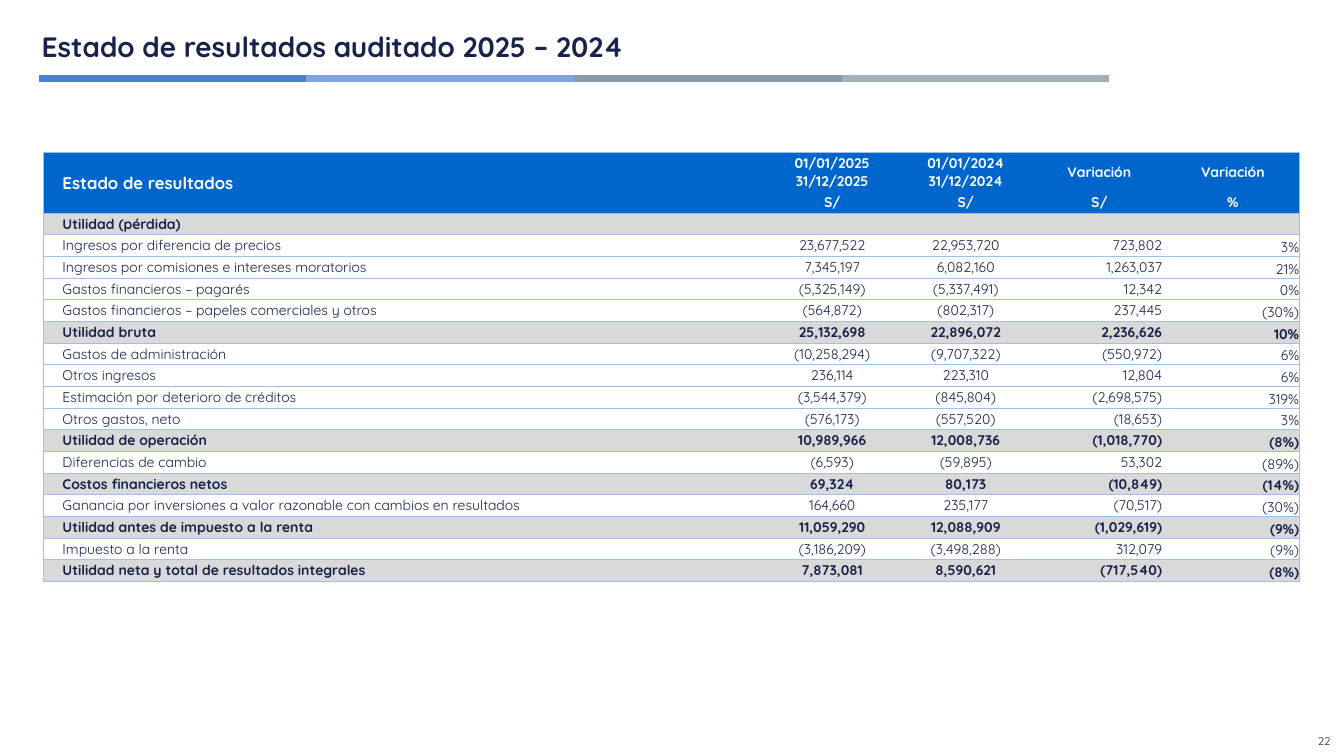
"""Builds the audited income statement slide, 2025 against 2024."""
from lxml.etree import SubElement
from pptx import Presentation
from pptx.dml.color import RGBColor
from pptx.enum.shapes import MSO_CONNECTOR
from pptx.enum.text import MSO_ANCHOR, PP_ALIGN
from pptx.oxml.ns import qn
from pptx.util import Inches, Pt

COLORS = {"navy": "19234A", "white": "FFFFFF", "header": "0066CC",
          "total": "D9D9D9", "border": "9BC2E6"}
BAR_COLORS = ["4B7ED5", "7FA4E1", "879AA5", "A2B0B9"]
NO_STYLE = "{2D5ABB26-0587-4C30-8999-92F81FD0307C}"
LEFT, CENTER, RIGHT = PP_ALIGN.LEFT, PP_ALIGN.CENTER, PP_ALIGN.RIGHT

HEADER = [
    ["Estado de resultados", "01/01/2025 31/12/2025", "01/01/2024 31/12/2024",
     "Variación", "Variación"],
    ["", "S/", "S/", "S/", "%"],
]
BODY = [
    ["Utilidad (pérdida)", "", "", "", ""],
    ["Ingresos por diferencia de precios", "23,677,522", "22,953,720", "723,802", "3%"],
    ["Ingresos por comisiones e intereses moratorios", "7,345,197", "6,082,160", "1,263,037", "21%"],
    ["Gastos financieros – pagarés", "(5,325,149)", "(5,337,491)", "12,342", "0%"],
    ["Gastos financieros – papeles comerciales y otros", "(564,872)", "(802,317)", "237,445", "(30%)"],
    ["Utilidad bruta", "25,132,698", "22,896,072", "2,236,626", "10%"],
    ["Gastos de administración", "(10,258,294)", "(9,707,322)", "(550,972)", "6%"],
    ["Otros ingresos", "236,114", "223,310", "12,804", "6%"],
    ["Estimación por deterioro de créditos", "(3,544,379)", "(845,804)", "(2,698,575)", "319%"],
    ["Otros gastos, neto", "(576,173)", "(557,520)", "(18,653)", "3%"],
    ["Utilidad de operación", "10,989,966", "12,008,736", "(1,018,770)", "(8%)"],
    ["Diferencias de cambio", "(6,593)", "(59,895)", "53,302", "(89%)"],
    ["Costos financieros netos", "69,324", "80,173", "(10,849)", "(14%)"],
    ["Ganancia por inversiones a valor razonable con cambios en resultados",
     "164,660", "235,177", "(70,517)", "(30%)"],
    ["Utilidad antes de impuesto a la renta", "11,059,290", "12,088,909", "(1,029,619)", "(9%)"],
    ["Impuesto a la renta", "(3,186,209)", "(3,498,288)", "312,079", "(9%)"],
    ["Utilidad neta y total de resultados integrales", "7,873,081", "8,590,621", "(717,540)", "(8%)"],
]
TOTALS = {"Utilidad (pérdida)", "Utilidad bruta", "Utilidad de operación",
          "Costos financieros netos", "Utilidad antes de impuesto a la renta",
          "Utilidad neta y total de resultados integrales"}


def add_text(tf, text, size=20, color="navy", bold=False, align=LEFT):
    tf.word_wrap = True
    p = tf.paragraphs[0]
    p.alignment = align
    p.font.size = Pt(size)
    if text:
        r = p.add_run()
        r.text = text
        r.font.name = "Quicksand"
        r.font.size = Pt(size)
        r.font.bold = bold
        r.font.color.rgb = RGBColor.from_string(COLORS[color])


def add_borders(cell, sides):
    tcPr = cell._tc.get_or_add_tcPr()
    for side in "LRTB":
        ln = SubElement(tcPr, qn(f"a:ln{side}"), w=str(Pt(0.5)))
        if side in sides:
            fill = SubElement(ln, qn("a:solidFill"))
            SubElement(fill, qn("a:srgbClr"), val=COLORS["border"])
        else:
            SubElement(ln, qn("a:noFill"))


prs = Presentation()
prs.slide_width, prs.slide_height = Inches(26.67), Inches(15)
s = prs.slides.add_slide(prs.slide_layouts[6])

title = s.shapes.add_textbox(Inches(0.73), Inches(0.54), Inches(20.33), Inches(0.77))
add_text(title.text_frame, "Estado de resultados auditado 2025 – 2024", size=40, bold=True)

bar_width = 5.31
for i, color in enumerate(BAR_COLORS):
    x = 0.77 + i * bar_width
    bar = s.shapes.add_connector(MSO_CONNECTOR.STRAIGHT, Inches(x), Inches(1.56),
                                 Inches(x + bar_width), Inches(1.56))
    bar.line.color.rgb = RGBColor.from_string(color)
    bar.line.width = Pt(10)
    SubElement(bar._element.spPr, qn("a:effectLst"))

page = s.shapes.add_textbox(Inches(25.94), Inches(14.52), Inches(0.67), Inches(0.36))
page.text_frame.vertical_anchor = MSO_ANCHOR.MIDDLE
add_text(page.text_frame, "22", size=16, align=CENTER)

rows = HEADER + BODY
frame = s.shapes.add_table(len(rows), 5, Inches(0.85), Inches(3.02), Inches(24.96), Inches(8.54))
table = frame.table
table.first_row = table.horz_banding = False
table._tbl.tblPr.find(qn("a:tableStyleId")).text = NO_STYLE
for col, width in zip(table.columns, [14.34] + [2.65] * 4):
    col.width = Inches(width)
for row, height in zip(table.rows, [0.79, 0.39] + [0.43] * len(BODY)):
    row.height = Inches(height)

for i, values in enumerate(rows):
    header = i < len(HEADER)
    total = values[0] in TOTALS
    for j, value in enumerate(values):
        cell = table.cell(i, j)
        cell.margin_left = Inches(0.39 if j == 0 else 0.01)
        cell.margin_right = Inches(0.08 if j == 3 and not header else 0.01)
        cell.margin_top, cell.margin_bottom = Inches(0.01), 0
        percent = j == 4 and not header
        cell.vertical_anchor = MSO_ANCHOR.BOTTOM if percent else MSO_ANCHOR.MIDDLE
        align = LEFT if j == 0 else CENTER if header or j < 3 else RIGHT
        add_text(cell.text_frame, value, size=24 if header and j == 0 else 20,
                 color="white" if header else "navy", bold=header or total, align=align)
        sides = "T" if i == 0 else "B" if i == 1 else "TB"
        add_borders(cell, sides + {0: "L", 4: "R"}.get(j, ""))
        if header or total:
            cell.fill.solid()
            cell.fill.fore_color.rgb = RGBColor.from_string(COLORS["header" if header else "total"])
        else:
            cell.fill.background()
table.cell(0, 0).merge(table.cell(1, 0))

prs.save("out.pptx")
